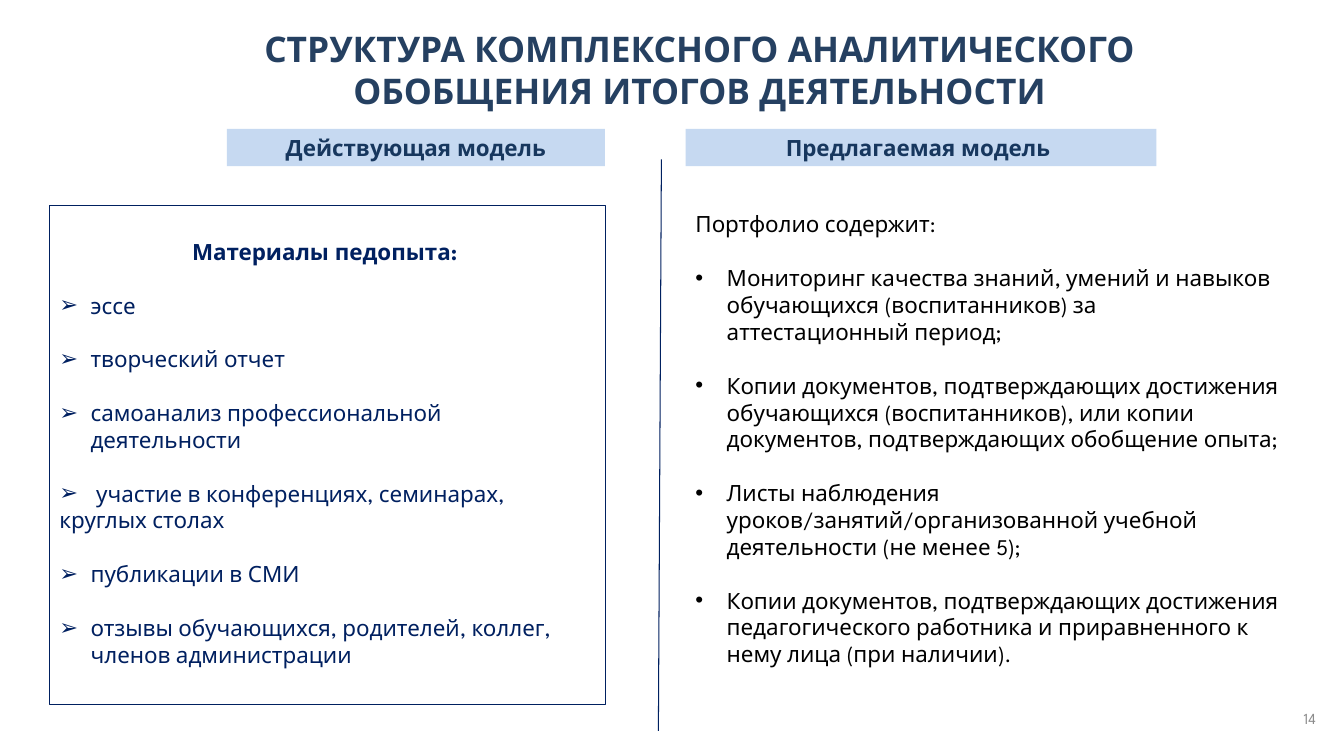
from dataclasses import dataclass

from lxml.etree import SubElement
from pptx import Presentation
from pptx.dml.color import RGBColor
from pptx.enum.shapes import MSO_CONNECTOR, MSO_SHAPE
from pptx.enum.text import MSO_ANCHOR, MSO_AUTO_SIZE, PP_ALIGN
from pptx.oxml.ns import qn
from pptx.util import Emu, Pt

FONT = "League Spartan"
BODY_SIZE = 16
BLANK_LINE = 19.2
HANGING = 31
INSET_X, INSET_Y = 10, 5
COLORS = {
    "title": "254061",
    "heading": "17375E",
    "band": "C6D9F1",
    "navy": "002060",
    "white": "FFFFFF",
    "black": "000000",
    "number": "8C8C8C",
}


@dataclass(frozen=True)
class Area:
    left: int
    top: int
    width: int
    height: int

    def emu(self) -> tuple[Emu, ...]:
        return px(self.left), px(self.top), px(self.width), px(self.height)


@dataclass(frozen=True)
class Line:
    text: str
    bullet: str = ""
    bold: bool = False
    gap: float = BLANK_LINE
    align: PP_ALIGN = PP_ALIGN.LEFT


@dataclass(frozen=True)
class Heading:
    text: str
    area: Area


HEADINGS = [
    Heading("Действующая модель", Area(225, 128, 375, 37)),
    Heading("Предлагаемая модель ", Area(680, 128, 467, 37)),
]
CURRENT_MODEL = [
    Line("Материалы педопыта: ", bold=True, gap=0, align=PP_ALIGN.CENTER),
    Line("эссе", "➢"),
    Line("творческий отчет", "➢"),
    Line("самоанализ профессиональной деятельности", "➢"),
    Line(" участие в конференциях, семинарах,", "➢"),
    Line("круглых столах", gap=0),
    Line("публикации в СМИ", "➢"),
    Line("отзывы обучающихся, родителей, коллег, членов администрации", "➢"),
]
PROPOSED_MODEL = [
    Line("Портфолио содержит:", gap=0),
    Line("Мониторинг качества знаний, умений и навыков обучающихся "
         "(воспитанников) за аттестационный период;", "•"),
    Line("Копии документов, подтверждающих достижения обучающихся "
         "(воспитанников), или копии документов, подтверждающих обобщение опыта;", "•"),
    Line("Листы наблюдения уроков/занятий/организованной учебной "
         "деятельности (не менее 5);", "•"),
    Line("Копии документов, подтверждающих достижения педагогического "
         "работника и приравненного к нему лица (при наличии).", "•"),
]


def px(length: int) -> Emu:
    return Emu(length * 9144)


def rgb(name: str) -> RGBColor:
    return RGBColor.from_string(COLORS[name])


def add_bullet(paragraph, char: str) -> None:
    properties = paragraph._p.get_or_add_pPr()
    properties.set("marL", str(px(HANGING)))
    properties.set("indent", str(-px(HANGING)))
    SubElement(properties, qn("a:buFont")).set("typeface", "Arial")
    SubElement(properties, qn("a:buChar")).set("char", char)


def write(shape, lines: list[Line], *, color: str, size: float = BODY_SIZE,
          anchor: MSO_ANCHOR = MSO_ANCHOR.TOP, top_inset: int = INSET_Y) -> None:
    frame = shape.text_frame
    frame.word_wrap = True
    frame.auto_size = MSO_AUTO_SIZE.NONE
    frame.vertical_anchor = anchor
    frame.margin_left = frame.margin_right = px(INSET_X)
    frame.margin_top, frame.margin_bottom = px(top_inset), px(INSET_Y)
    for index, line in enumerate(lines):
        paragraph = frame.add_paragraph() if index else frame.paragraphs[0]
        paragraph.alignment = line.align
        paragraph.space_before = Pt(line.gap)
        if line.bullet:
            add_bullet(paragraph, line.bullet)
        run = paragraph.add_run()
        run.text = line.text
        run.font.name = FONT
        run.font.size = Pt(size)
        run.font.bold = line.bold
        run.font.color.rgb = rgb(color)


def add_rectangle(slide, area: Area, fill: str, outline: str = ""):
    rectangle = slide.shapes.add_shape(MSO_SHAPE.RECTANGLE, *area.emu())
    rectangle.shadow.inherit = False
    rectangle.fill.solid()
    rectangle.fill.fore_color.rgb = rgb(fill)
    if outline:
        rectangle.line.color.rgb = rgb(outline)
        rectangle.line.width = Pt(0.75)
    else:
        rectangle.line.fill.background()
    return rectangle


def add_divider(slide) -> None:
    divider = slide.shapes.add_connector(
        MSO_CONNECTOR.STRAIGHT, px(656), px(158), px(653), px(725))
    divider.line.color.rgb = rgb("navy")
    divider.line.width = Pt(0.75)
    SubElement(divider._element.spPr, qn("a:effectLst"))


def main() -> None:
    presentation = Presentation()
    presentation.slide_width, presentation.slide_height = px(1333), px(750)
    slide = presentation.slides.add_slide(presentation.slide_layouts[5])

    title = slide.shapes.title
    title.left, title.top, title.width, title.height = Area(250, 27, 888, 84).emu()
    heading_text = "СТРУКТУРА КОМПЛЕКСНОГО АНАЛИТИЧЕСКОГО ОБОБЩЕНИЯ ИТОГОВ ДЕЯТЕЛЬНОСТИ"
    write(title, [Line(heading_text, bold=True, gap=0, align=PP_ALIGN.CENTER)],
          color="title", size=25.2, anchor=MSO_ANCHOR.MIDDLE)

    slide_number = slide.shapes.add_textbox(*Area(1156, 700, 159, 25).emu())
    write(slide_number, [Line("14", gap=0, align=PP_ALIGN.RIGHT)],
          color="number", size=11, anchor=MSO_ANCHOR.MIDDLE)

    add_divider(slide)

    current = add_rectangle(slide, Area(49, 204, 552, 495), "white", "navy")
    write(current, CURRENT_MODEL, color="navy", top_inset=32)

    for heading in HEADINGS:
        band = add_rectangle(slide, heading.area, "band")
        write(band, [Line(heading.text, bold=True, gap=0, align=PP_ALIGN.CENTER)],
              color="heading")

    proposed = slide.shapes.add_textbox(*Area(680, 204, 604, 495).emu())
    write(proposed, PROPOSED_MODEL, color="black")

    presentation.save("out.pptx")


if __name__ == "__main__":
    main()
